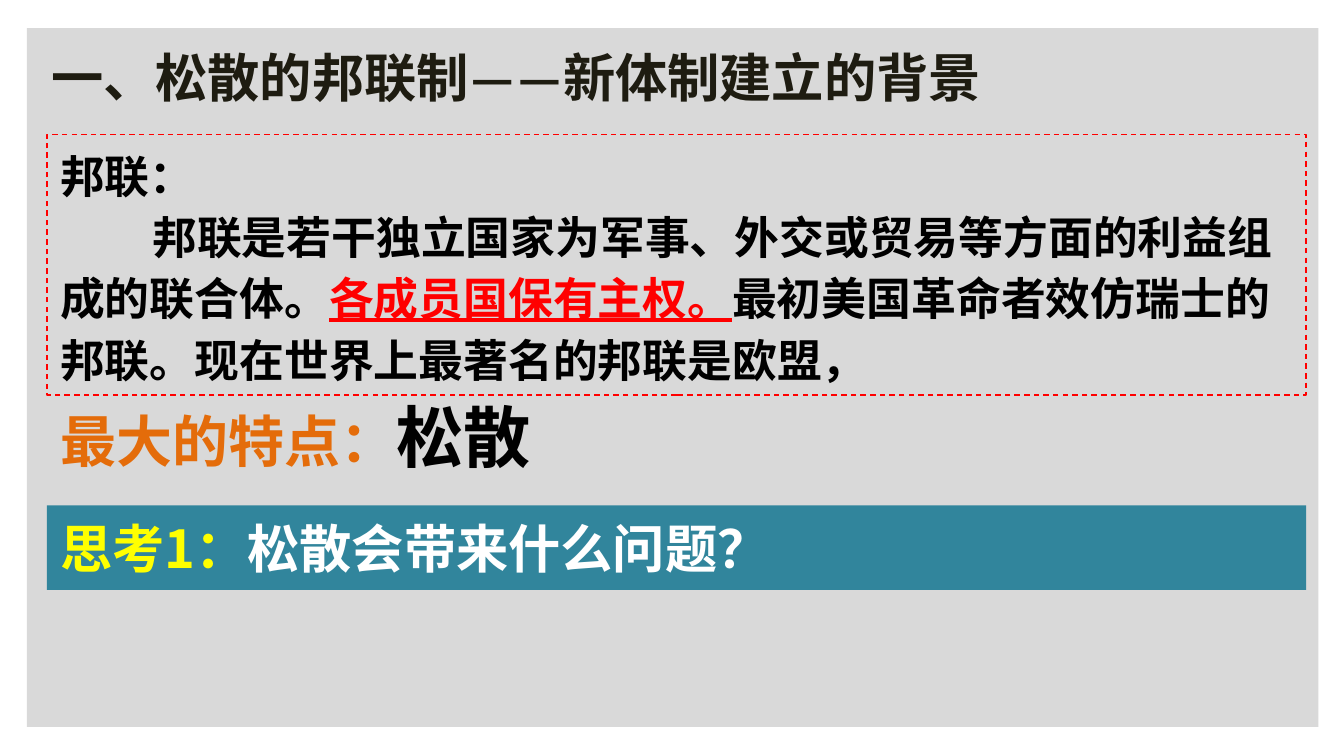
from pptx import Presentation
from pptx.dml.color import RGBColor
from pptx.enum.dml import MSO_LINE
from pptx.enum.shapes import MSO_SHAPE
from pptx.enum.text import MSO_ANCHOR, MSO_AUTO_SIZE, PP_ALIGN
from pptx.oxml.ns import qn
from pptx.util import Pt
from lxml.etree import SubElement

GREY = RGBColor(0xD9, 0xD9, 0xD9)
DARK = RGBColor(0x1E, 0x1C, 0x11)
BLACK = RGBColor(0, 0, 0)
RED = RGBColor(0xFF, 0, 0)
ORANGE = RGBColor(0xE4, 0x6C, 0x0A)
TEAL = RGBColor(0x31, 0x85, 0x9C)
YELLOW = RGBColor(0xFF, 0xFF, 0)
WHITE = RGBColor(0xFF, 0xFF, 0xFF)
CJK = "Noto Sans CJK JP"

# Content: each paragraph is a list of (text, font values)
heading = {"size": Pt(28), "name": "Calibri", "color": DARK}
body = {"size": Pt(24), "name": "Calibri", "color": BLACK}
feature = {"size": Pt(30), "name": CJK, "color": ORANGE}
prompt = {"size": Pt(28), "name": "Arial", "color": YELLOW}

TITLE = [[("一、松散的邦联制——新体制建立的背景", heading)]]
DEFINITION = [
    [("邦联：", body)],
    [("邦联是若干独立国家为军事、外交或贸易等方面的利益组成的联合体。", body),
     ("各成员国保有主权。", {**body, "color": RED, "underline": True}),
     ("最初美国革命者效仿瑞士的邦联。现在世界上最著名的邦联是欧盟，", body)],
]
FEATURE = [[("最大的特点：", feature),
            ("松散", {**feature, "size": Pt(36), "color": BLACK})]]
QUESTION = [[("思考", prompt), ("1", {**prompt, "name": CJK}), ("：", prompt),
             ("松散会带来什么问题？", {**prompt, "color": WHITE})]]

# Layout
LEFT, WIDTH = 25.2, 674.6
PANEL = (14.4, 15.1, 691.9, 374.4)
TITLE_AREA = (20.2, 20.9, 663.1, 41)
DEFINITION_AREA = (LEFT, 72, WIDTH, 139.7)
FEATURE_AREA = (LEFT, 208.1, WIDTH, 51.1)
QUESTION_AREA = (LEFT, 270.7, WIDTH, 45.4)
LINE_SPACING = 1.14
FIRST_LINE_INDENT = Pt(49.3)


def points(area):
    return [Pt(value) for value in area]


def add_rectangle(page, area, fill=None):
    box = page.shapes.add_shape(MSO_SHAPE.RECTANGLE, *points(area))
    box.shadow.inherit = False
    box.line.fill.background()
    if fill is None:
        box.fill.background()
    else:
        box.fill.solid()
        box.fill.fore_color.rgb = fill
    return box


def write(box, paragraphs, anchor=MSO_ANCHOR.TOP, spacing=1.0):
    frame = box.text_frame
    frame.word_wrap = True
    frame.auto_size = MSO_AUTO_SIZE.NONE
    frame.vertical_anchor = anchor
    for index, spans in enumerate(paragraphs):
        para = frame.add_paragraph() if index else frame.paragraphs[0]
        para.alignment = PP_ALIGN.LEFT
        para.line_spacing = spacing
        para.space_before = para.space_after = Pt(0)
        for text, values in spans:
            span = para.add_run()
            span.text = text
            span.font.bold = True
            for key, value in values.items():
                if key == "color":
                    span.font.color.rgb = value
                else:
                    setattr(span.font, key, value)
            # East Asian characters take the same typeface
            east_asian = SubElement(span.font._element, qn("a:ea"))
            east_asian.set("typeface", values["name"])


deck = Presentation()
deck.slide_width, deck.slide_height = Pt(720), Pt(405)
page = deck.slides.add_slide(deck.slide_layouts[5])

# Title on the grey panel
title = page.shapes.title
title.left, title.top, title.width, title.height = points(TITLE_AREA)
write(title, TITLE)
panel = add_rectangle(page, PANEL, GREY)
title.element.addprevious(panel.element)

# Definition in a dashed frame
definition = add_rectangle(page, DEFINITION_AREA)
definition.line.color.rgb = RED
definition.line.width = Pt(0.75)
definition.line.dash_style = MSO_LINE.DASH
write(definition, DEFINITION, spacing=LINE_SPACING)
explanation = definition.text_frame.paragraphs[1]
explanation._p.get_or_add_pPr().set("indent", str(FIRST_LINE_INDENT))

# Main feature
write(page.shapes.add_textbox(*points(FEATURE_AREA)), FEATURE)

# Question bar
write(add_rectangle(page, QUESTION_AREA, TEAL), QUESTION, MSO_ANCHOR.MIDDLE)

deck.save("out.pptx")
